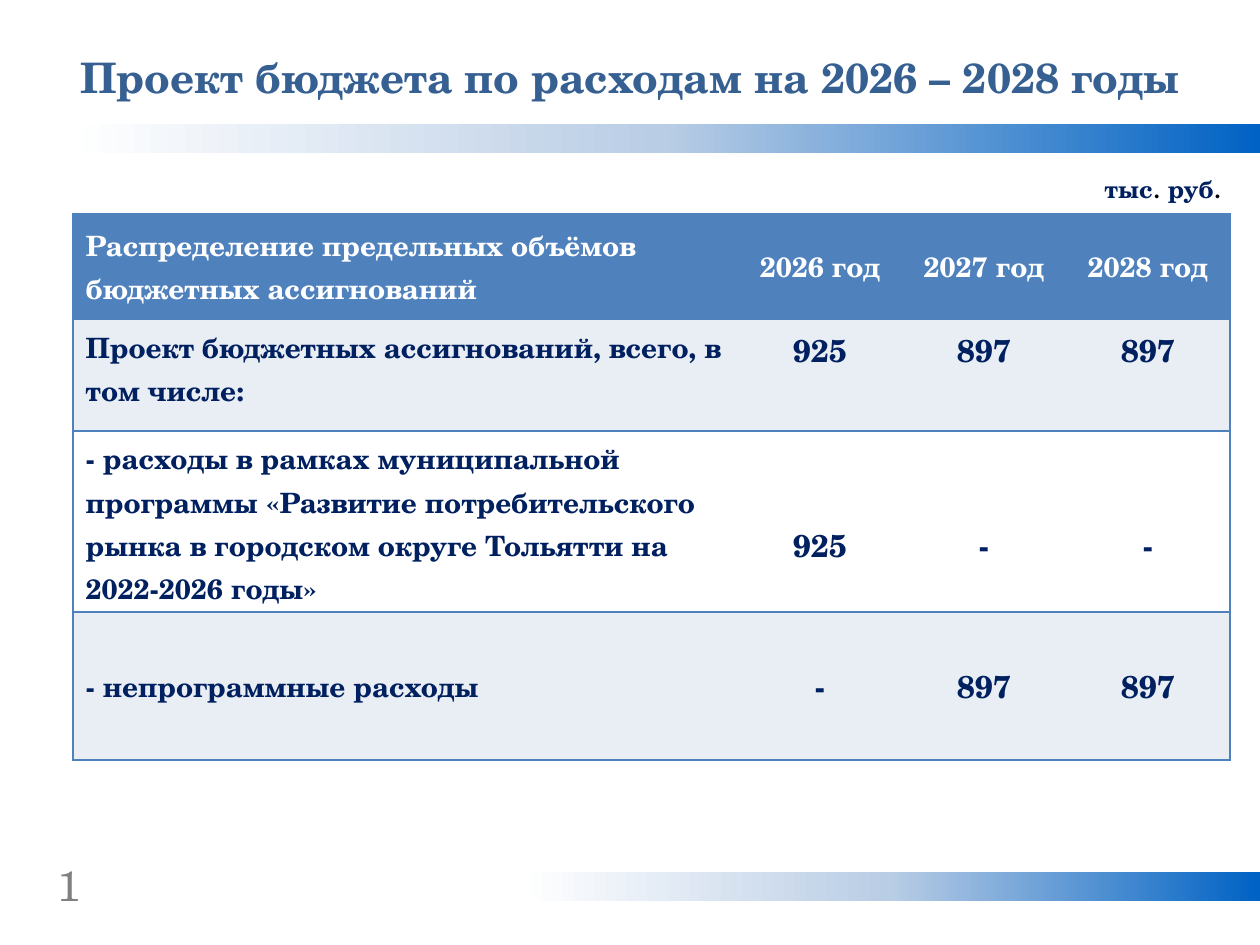
"""Builds the slide with the draft budget expenditure table for 2026–2028."""
import copy

import pptx
import pptx.dml.color
import pptx.enum.shapes
import pptx.enum.text
import pptx.oxml
import pptx.oxml.ns
import pptx.util

COLORS = {
    "title": "376092", "navy": "002060", "blue": "4F81BD", "band": "E9EDF4",
    "white": "FFFFFF", "grey": "808080", "black": "000000",
    "deep": "0062C4", "pale": "B9CDE5",
}
ALIGN = pptx.enum.text.PP_ALIGN
ANCHOR = pptx.enum.text.MSO_ANCHOR


class SlideBuilder:
    scale = pptx.util.Inches(1) // 126
    font = "TeX Gyre Schola"

    def __init__(self, presentation):
        self.slide = presentation.slides.add_slide(presentation.slide_layouts[6])

    def px(self, *lengths):
        return [length * self.scale for length in lengths]

    def color(self, name):
        return pptx.dml.color.RGBColor.from_string(COLORS[name])

    def add_text_run(self, paragraph, text, color, **formats):
        run = paragraph.add_run()
        run.text = text
        values = {"name": self.font, "bold": True, **formats}
        values["size"] = pptx.util.Pt(values["size"])
        for name, value in values.items():
            setattr(run.font, name, value)
        run.font.color.rgb = self.color(color)

    def text(self, box, runs, align=ALIGN.LEFT, **formats):
        frame = self.slide.shapes.add_textbox(*self.px(*box)).text_frame
        for name, value in {"word_wrap": True, **formats}.items():
            setattr(frame, name, value)
        paragraph = frame.paragraphs[0]
        paragraph.alignment = align
        for text, color, values in runs:
            self.add_text_run(paragraph, text, color, **values)

    def gradient_bar(self, box):
        shape = self.slide.shapes.add_shape(
            pptx.enum.shapes.MSO_SHAPE.RECTANGLE, *self.px(*box))
        shape.shadow.inherit = False
        shape.line.fill.background()
        shape.fill.gradient()
        shape.fill.gradient_angle = 180
        stop_list = shape._element.spPr.find(".//" + pptx.oxml.ns.qn("a:gsLst"))
        stop_list.append(copy.deepcopy(stop_list[0]))
        stops = zip(shape.fill.gradient_stops, (0, 0.5, 1), ("deep", "pale", "white"))
        for stop, position, color in stops:
            stop.position = position
            stop.color.rgb = self.color(color)

    def border(self, cell, sides):
        properties = cell._tc.get_or_add_tcPr()
        for index, side in enumerate(("L", "R", "T", "B")):
            fill = "<a:noFill/>"
            if side in sides:
                fill = f'<a:solidFill><a:srgbClr val="{COLORS["blue"]}"/></a:solidFill>'
            properties.insert(index, pptx.oxml.parse_xml(
                f'<a:ln{side} {pptx.oxml.ns.nsdecls("a")} w="12700">{fill}</a:ln{side}>'))

    def table(self, box, widths, heights, rows, cell_formats):
        table = self.slide.shapes.add_table(
            len(rows), len(widths), *self.px(*box)).table
        for column, width in zip(table.columns, self.px(*widths)):
            column.width = width
        for row, height in zip(table.rows, self.px(*heights)):
            row.height = height
        last = len(widths) - 1
        for row_index, texts in enumerate(rows):
            header = row_index == 0
            fill = "blue" if header else ("white", "band")[row_index % 2]
            for column_index, text in enumerate(texts):
                cell = table.cell(row_index, column_index)
                cell.fill.solid()
                cell.fill.fore_color.rgb = self.color(fill)
                sides = {0: "LTB", last: "RTB"}.get(column_index, "TB")
                self.border(cell, sides)
                label = column_index == 0
                values = {"vertical_anchor": ANCHOR.MIDDLE,
                          **cell_formats.get((row_index, label), {})}
                for name, value in values.items():
                    setattr(cell, name, value)
                paragraph = cell.text_frame.paragraphs[0]
                paragraph.alignment = ALIGN.LEFT if label else ALIGN.CENTER
                self.add_text_run(paragraph, text, "white" if header else "navy",
                                  size=16 if header or label else 18)


def main():
    presentation = pptx.Presentation()
    presentation.slide_width = pptx.util.Inches(10)
    presentation.slide_height = pptx.util.Inches(7.5)
    builder = SlideBuilder(presentation)

    builder.gradient_bar((66, 124, 1194, 29))
    builder.text((68, 45, 1167, 63), [
        ("Проект бюджета по расходам на 2026 – 2028 годы", "title", {"size": 24})])
    builder.gradient_bar((520, 872, 740, 29))
    builder.text((45, 853, 39, 63), [("1", "grey", {"size": 24, "bold": False})],
                 margin_right=0)

    rows = [
        ("Распределение предельных объёмов бюджетных ассигнований",
         "2026 год", "2027 год", "2028 год"),
        ("Проект бюджетных ассигнований, всего, в том числе:", "925", "897", "897"),
        ("- расходы в рамках муниципальной программы «Развитие потребительского "
         "рынка в городском округе Тольятти на 2022-2026 годы»", "925", "-", "-"),
        ("- непрограммные расходы", "-", "897", "897"),
    ]
    top = {"vertical_anchor": ANCHOR.TOP}
    cell_formats = {
        (1, True): top,
        (1, False): top,
        (2, True): {**top, "margin_bottom": 0},
        (2, False): {"margin_top": builder.px(54)[0]},
    }
    builder.table((73, 214, 1157, 546), (665, 164, 164, 164),
                  (105, 112, 181, 148), rows, cell_formats)

    word = {"size": 14}
    dot = {"size": 18, "bold": False, "name": "Calibri"}
    builder.text((1046, 161, 188, 50), [
        ("тыс", "navy", word), (". ", "black", dot),
        ("руб", "navy", word), (".", "black", dot)], ALIGN.RIGHT)
    presentation.save("out.pptx")


if __name__ == "__main__":
    main()
